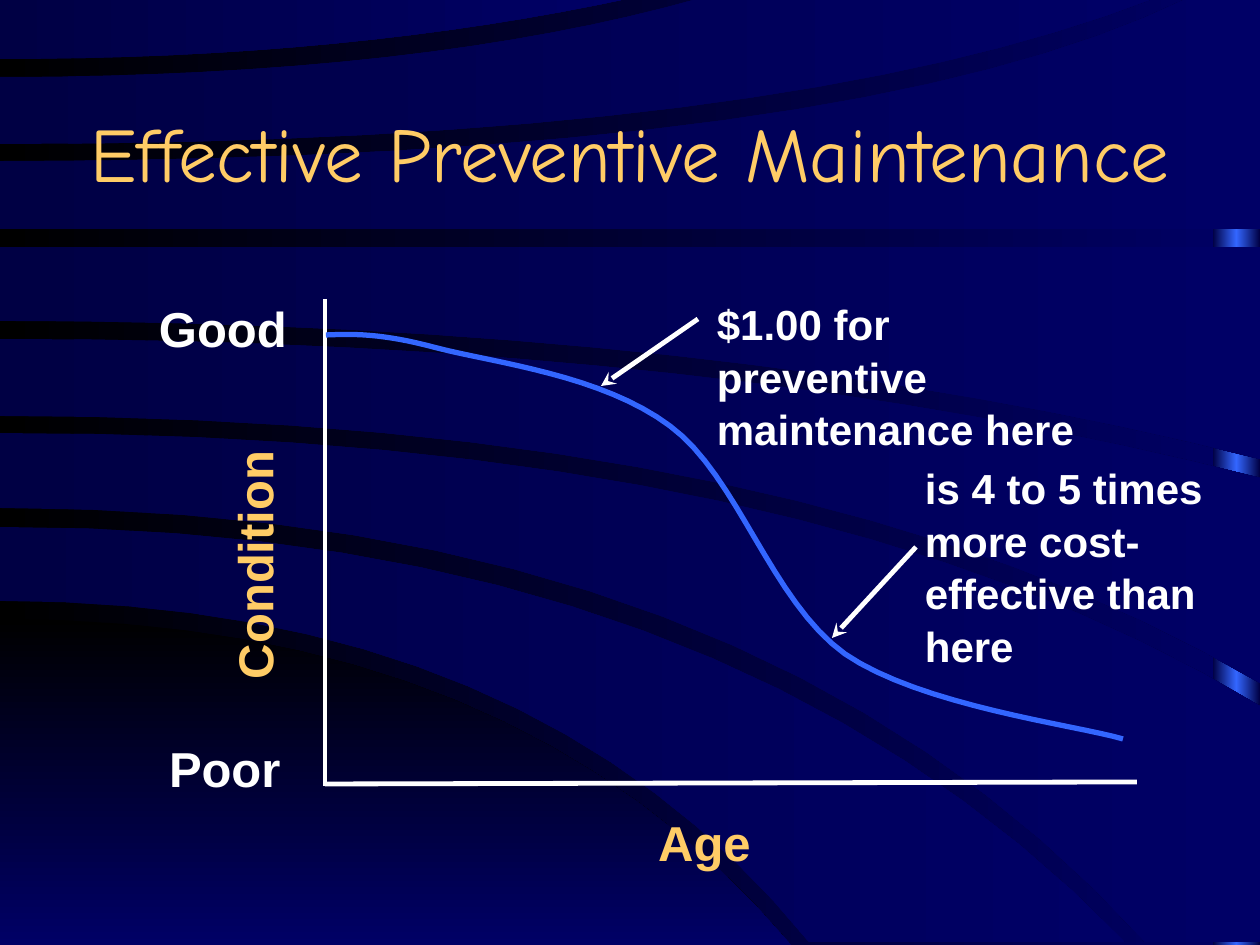
import pptx
import pptx.util
import pptx.dml.color
import pptx.enum.shapes
import pptx.enum.text
import pptx.oxml
import pptx.oxml.ns
from copy import deepcopy

PX = 914400 // 126
W, H = 1260, 945
COLORS = {"black": "000000", "navy": "000044", "blue": "000066",
          "bright": "3366FF", "gold": "FFCC66", "white": "FFFFFF"}

# Background bands: upper and lower edge, each a bend that leaves the left side
# level: y at the left, x of the bend, end x, end y
CORNER = ((619, 516, 791, 945), (945, 395, 791, 945))
BANDS = [
    ((527, 724, 1125, 942), (601, 532, 809, 942)),
    ((433, 810, W, 706), (508, 753, 1145, 942)),
    ((339, 719, W, 478), (416, 807, W, 683)),
    ((247, 630, W, 247), (321, 717, W, 459)),
    ((161, 854, 1188, -2), (229, 630, W, 229)),
    ((77, 422, 701, -2), (144, 780, 1155, -2)),
    ((-2, 315, 631, -2), (59, 349, 631, -2)),
]

# Condition curve: start point, then (control, control, end) per segment
CURVE_START = (326, 335)
CURVE = [((353, 334), (381, 333), (437, 348)), ((495, 363), (602, 375), (670, 426)),
         ((738, 476), (771, 601), (845, 654)), ((921, 706), (1075, 725), (1123, 739))]

# Lines: start, end, arrowhead at the start
LINES = [((325, 784), (1137, 782), False), ((325, 299), (325, 786), False),
         ((601, 386), (698, 319), True), ((832, 638), (916, 547), True)]

# Labels: text, box, size, colour, centred, vertical
LABELS = [
    ("Good", (158, 295, 161, 73), 28, "white", False, False),
    ("Poor", (168, 735, 147, 62), 28, "white", False, False),
    ("Age", (640, 809, 129, 55), 28, "gold", True, False),
    ("Condition", (221, 410, 54, 270), 28, "gold", False, True),
    ("$1.00 for preventive maintenance here", (716, 296, 369, 57), 24, "white", False, False),
    ("is 4 to 5 times more cost-effective than here", (924, 460, 340, 72), 24, "white",
     False, False),
]


def rgb(name):
    return pptx.dml.color.RGBColor.from_string(COLORS[name])


def gradient(fill, names, angle=0):
    fill.gradient()
    fill.gradient_angle = angle
    first = fill.gradient_stops[0]._gs
    for _ in names[2:]:
        first.addnext(deepcopy(first))
    for i, (stop, name) in enumerate(zip(fill.gradient_stops, names)):
        stop.position = i / (len(names) - 1)
        stop.color.rgb = rgb(name)


def bezier(a, b, c, d, steps=16):
    """Points after a, up to and including d."""
    for i in range(1, steps + 1):
        t = i / steps
        u = 1 - t
        yield tuple(u**3 * p + 3 * u * u * t * q + 3 * u * t * t * r + t**3 * v
                    for p, q, r, v in zip(a, b, c, d))


def edge(y, bend, end_x, end_y):
    start, end = (0, y), (end_x, end_y)
    near, far = [((x + 2 * bend) / 3, (v + 2 * y) / 3) for x, v in (start, end)]
    return [start, *bezier(start, near, far, end)]


def outline(points, close):
    builder = s.shapes.build_freeform(round(points[0][0] * PX), round(points[0][1] * PX))
    builder.add_line_segments([(round(x * PX), round(y * PX)) for x, y in points[1:]], close)
    sp = builder.convert_to_shape()
    sp.shadow.inherit = False
    return sp


def band(upper, lower, names, angle=0):
    top, bottom = edge(*upper), edge(*lower)
    ends = sorted([top[-1], bottom[-1]])
    corner = (ends[1][0], ends[0][1])
    sp = outline(top + [corner] + bottom[::-1], True)
    gradient(sp.fill, names, angle)
    sp.line.fill.background()


def text(content, box, size, color, font, centred):
    sp = s.shapes.add_textbox(*(v * PX for v in box))
    tf = sp.text_frame
    tf.word_wrap = True
    tf.text = content
    p = tf.paragraphs[0]
    if centred:
        p.alignment = pptx.enum.text.PP_ALIGN.CENTER
    r = p.runs[0]
    r.font.size = pptx.util.Pt(size)
    r.font.name = font
    r.font.color.rgb = rgb(color)
    return tf


prs = pptx.Presentation()
prs.slide_width, prs.slide_height = W * PX, H * PX
s = prs.slides.add_slide(prs.slide_layouts[6])

# Background
gradient(s.background.fill, ["black", "blue"])
strip = s.shapes.add_shape(pptx.enum.shapes.MSO_SHAPE.RECTANGLE,
                           1213 * PX, 0, 47 * PX, H * PX)
strip.shadow.inherit = False
strip.line.fill.background()
gradient(strip.fill, ["navy", "bright", "navy"])
band(*CORNER, ["black", "blue"], 270)
for upper, lower in BANDS:
    band(upper, lower, ["navy", "blue"])

# Title
tf = text("Effective Preventive Maintenance", (63, 73, 1134, 158), 44, "gold",
          "Comic Neue", True)
tf.vertical_anchor = pptx.enum.text.MSO_ANCHOR.MIDDLE

# Axes and arrows
for start, end, arrow in LINES:
    line = s.shapes.add_connector(pptx.enum.shapes.MSO_CONNECTOR.STRAIGHT,
                                  *(v * PX for v in start + end))
    line.line.color.rgb = rgb("white")
    line.line.width = pptx.util.Pt(2.75)
    if arrow:
        head = pptx.oxml.parse_xml(
            f'<a:headEnd {pptx.oxml.ns.nsdecls("a")} type="stealth"/>')
        line.line._get_or_add_ln().append(head)
    line._element.spPr.append(
        pptx.oxml.parse_xml(f'<a:effectLst {pptx.oxml.ns.nsdecls("a")}/>'))

# Labels
for content, box, size, color, centred, vertical in LABELS:
    tf = text(content, box, size, color, "Arial", centred)
    tf.margin_left = tf.margin_right = tf.margin_top = tf.margin_bottom = PX
    p = tf.paragraphs[0]
    p.line_spacing = 1.04
    p.space_before = pptx.util.Pt(2)
    p.runs[0].font.bold = True
    if vertical:
        tf._txBody.bodyPr.set("vert", "vert270")

# Condition curve
points = [CURVE_START]
for b, c, d in CURVE:
    points += bezier(points[-1], b, c, d)
curve = outline(points, False)
curve.fill.background()
curve.line.color.rgb = rgb("bright")
curve.line.width = pptx.util.Pt(3)

prs.save("out.pptx")
